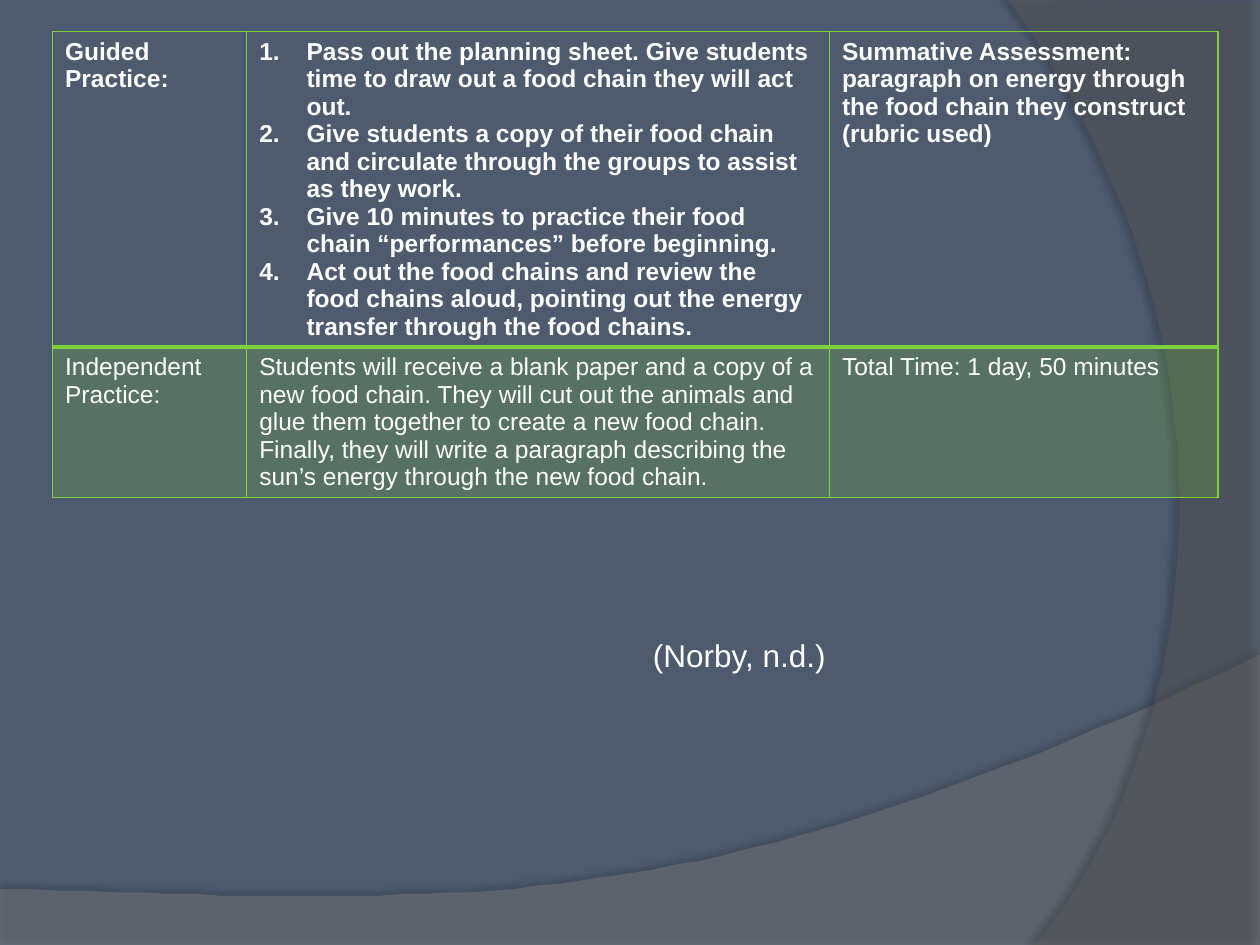
from dataclasses import dataclass

from lxml.etree import SubElement
from pptx import Presentation
from pptx.dml.color import RGBColor
from pptx.enum.text import MSO_AUTO_SIZE
from pptx.oxml import parse_xml
from pptx.oxml.ns import nsdecls, qn
from pptx.util import Pt


@dataclass(frozen=True)
class Theme:
    background: str = "4E5B6F"
    wave: str = "7F7F7F"
    arc: str = "5E5E5E"
    shade: str = "000000"
    accent: str = "7FD13B"
    text: str = "FFFFFF"
    font: str = "Arial"
    table_size: int = 14
    citation_size: int = 18


THEME = Theme()

COLUMN_WIDTHS = (111, 333, 222)
ROW_HEIGHTS = (180, 86)
LESSON_ROWS = (
    (
        ["Guided Practice:"],
        [
            "Pass out the planning sheet. Give students time to draw out a food chain they will act out.",
            "Give students a copy of their food chain and circulate through the groups to assist as they work.",
            "Give 10 minutes to practice their food chain “performances” before beginning.",
            "Act out the food chains and review the food chains aloud, pointing out the energy "
            "transfer through the food chains.",
        ],
        ["Summative Assessment: paragraph on energy through the food chain they construct (rubric used)"],
    ),
    (
        ["Independent Practice:"],
        [
            "Students will receive a blank paper and a copy of a new food chain. They will cut out "
            "the animals and glue them together to create a new food chain. Finally, they will write "
            "a paragraph describing the sun’s energy through the new food chain."
        ],
        ["Total Time: 1 day, 50 minutes"],
    ),
)


def apply_format(target, values):
    for name, value in values.items():
        setattr(target, name, value)


def format_run(run, size, bold=False):
    apply_format(run.font, {"name": THEME.font, "size": Pt(size), "bold": bold})
    run.font.color.rgb = RGBColor.from_string(THEME.text)


def fill_translucent(fill, color, opacity, properties):
    fill.solid()
    fill.fore_color.rgb = RGBColor.from_string(color)
    tint = properties.find(qn("a:solidFill")).find(qn("a:srgbClr"))
    SubElement(tint, qn("a:alpha"), val=str(opacity * 1000))


def curve(start, control_1, control_2, end, steps=48):
    """Points along a cubic Bezier curve, without its start."""
    points = []
    for step in range(1, steps + 1):
        t = step / steps
        weights = ((1 - t) ** 3, 3 * t * (1 - t) ** 2, 3 * t**2 * (1 - t), t**3)
        corners = (start, control_1, control_2, end)
        points.append(tuple(sum(w * c[axis] for w, c in zip(weights, corners)) for axis in (0, 1)))
    return points


def add_sweep(slide, outline, color, opacity, shadow):
    builder = slide.shapes.build_freeform(*outline[0], scale=Pt(1))
    builder.add_line_segments(outline[1:], close=True)
    sweep = builder.convert_to_shape()
    properties = sweep._element.spPr
    fill_translucent(sweep.fill, color, opacity, properties)
    sweep.line.fill.background()
    sweep.shadow.inherit = False

    # Soft outer shadow
    shadow_opacity, blur, distance, angle = shadow
    properties.find(qn("a:effectLst")).append(parse_xml(
        f'<a:outerShdw {nsdecls("a")} blurRad="{Pt(blur)}" dist="{Pt(distance)}" '
        f'dir="{angle * 60000}" algn="ctr" rotWithShape="0"><a:srgbClr val="{THEME.shade}">'
        f'<a:alpha val="{shadow_opacity * 1000}"/></a:srgbClr></a:outerShdw>'
    ))


def set_borders(cell, widths):
    properties = cell._tc.get_or_add_tcPr()
    for position, (side, width) in enumerate(widths.items()):
        properties.insert(position, parse_xml(
            f'<a:ln{side} {nsdecls("a")} w="{Pt(width)}"><a:solidFill>'
            f'<a:srgbClr val="{THEME.accent}"/></a:solidFill></a:ln{side}>'
        ))


def number_paragraph(paragraph, indent=27):
    properties = paragraph._p.get_or_add_pPr()
    properties.set("marL", str(Pt(indent)))
    properties.set("indent", str(-Pt(indent)))
    SubElement(properties, qn("a:buFont"), typeface="+mj-lt")
    SubElement(properties, qn("a:buAutoNum"), type="arabicPeriod")


def write_cell(cell, lines, bold):
    for index, line in enumerate(lines):
        paragraph = cell.text_frame.add_paragraph() if index else cell.text_frame.paragraphs[0]
        run = paragraph.add_run()
        run.text = line
        format_run(run, THEME.table_size, bold)
        if len(lines) > 1:
            number_paragraph(paragraph)


def add_lesson_table(slide):
    lesson = slide.shapes.add_table(
        len(ROW_HEIGHTS), len(COLUMN_WIDTHS), Pt(30), Pt(18),
        Pt(sum(COLUMN_WIDTHS)), Pt(sum(ROW_HEIGHTS)),
    ).table
    apply_format(lesson, {"first_row": True, "horz_banding": False})
    for column, width in zip(lesson.columns, COLUMN_WIDTHS):
        column.width = Pt(width)
    for row_index, (row, height) in enumerate(zip(lesson.rows, ROW_HEIGHTS)):
        row.height = Pt(height)
        is_guided = row_index == 0
        for cell, lines in zip(row.cells, LESSON_ROWS[row_index]):
            write_cell(cell, lines, bold=is_guided)
            if is_guided:
                cell.fill.background()
            else:
                fill_translucent(cell.fill, THEME.accent, 20, cell._tc.get_or_add_tcPr())
            # The heavier rule divides the two rows
            top, bottom = (1, 2) if is_guided else (2, 1)
            set_borders(cell, {"L": 1, "R": 1, "T": top, "B": bottom})


def add_citation(slide):
    citation = slide.shapes.add_textbox(Pt(366), Pt(360), Pt(114.5), Pt(29)).text_frame
    apply_format(citation, {"word_wrap": False, "auto_size": MSO_AUTO_SIZE.SHAPE_TO_FIT_TEXT})
    run = citation.paragraphs[0].add_run()
    run.text = "(Norby, n.d.)"
    format_run(run, THEME.citation_size)


def main():
    deck = Presentation()
    apply_format(deck, {"slide_width": Pt(720), "slide_height": Pt(540)})
    slide = deck.slides.add_slide(deck.slide_layouts[6])

    # Backdrop
    slide.background.fill.solid()
    slide.background.fill.fore_color.rgb = RGBColor.from_string(THEME.background)
    wave = [(0, 507.6), (0, 540.7), (720, 540.7), (720, 374.4)]
    wave += curve(wave[-1], (402.5, 524.9), (281.5, 517.7), wave[0])
    add_sweep(slide, wave, THEME.wave, 45, (35, 4, 3.5, 270))
    arc = [(720, 1.4), (720, 540), (591, 540)]
    arc += curve(arc[-1], (673.2, 445.7), (733, 216), (576, 0))
    add_sweep(slide, arc, THEME.arc, 40, (45, 4, 4, 180))

    # Lesson plan and its source
    add_lesson_table(slide)
    add_citation(slide)

    deck.save("out.pptx")


if __name__ == "__main__":
    main()
